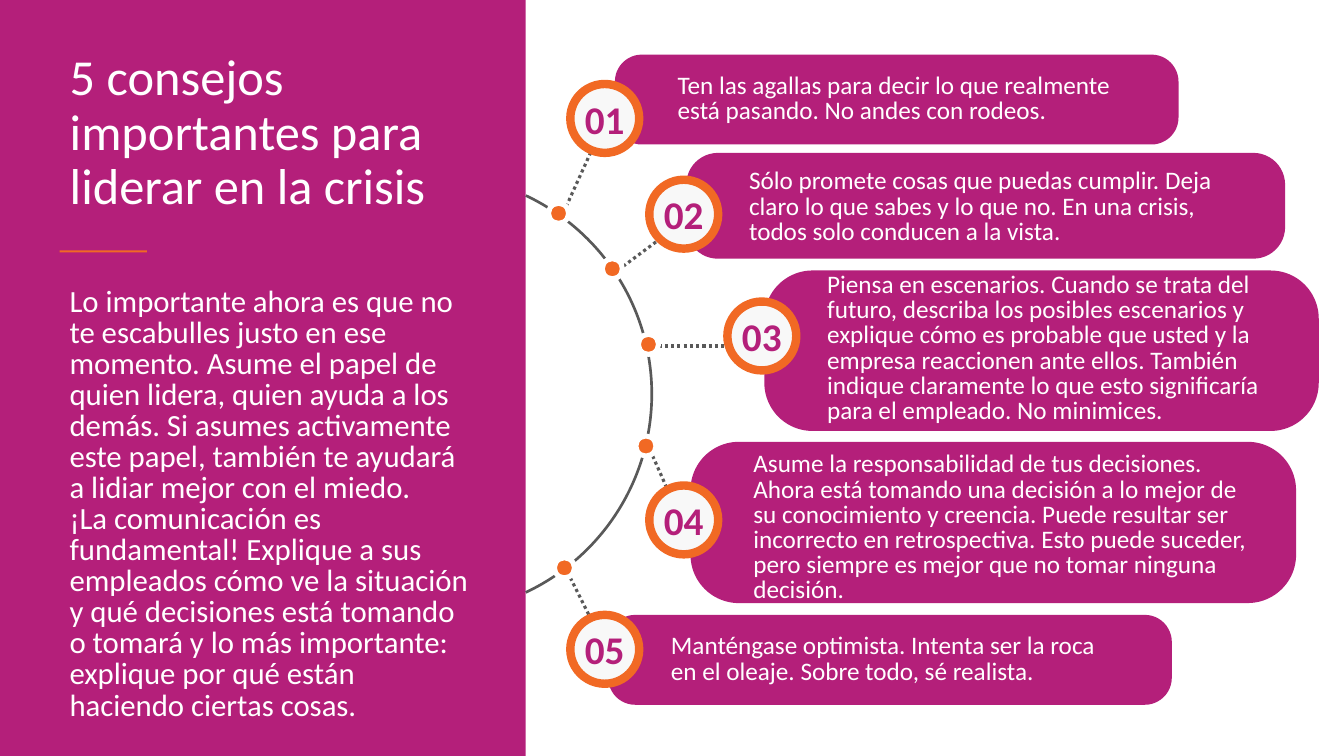
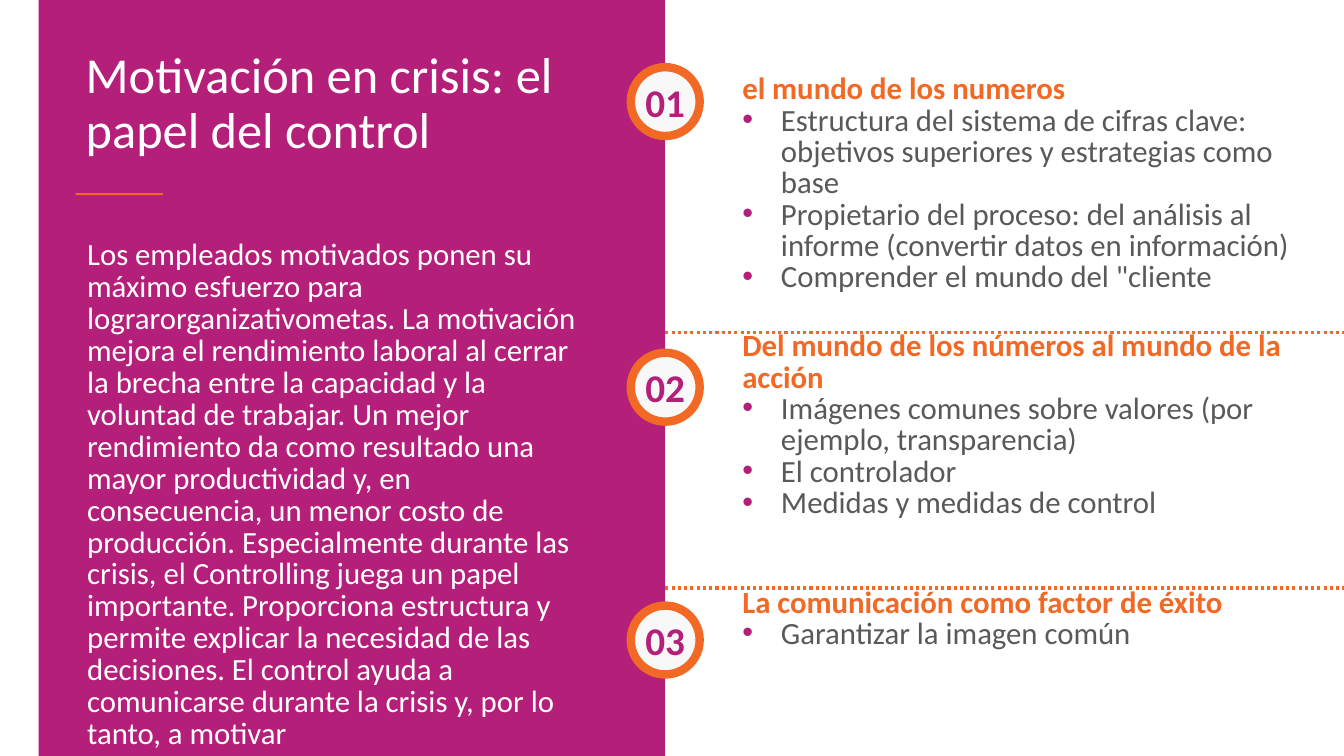
from math import acos, degrees

from lxml.etree import SubElement
from pptx import Presentation
from pptx.dml.color import RGBColor
from pptx.enum.dml import MSO_LINE
from pptx.enum.shapes import MSO_CONNECTOR, MSO_SHAPE
from pptx.enum.text import MSO_ANCHOR, MSO_AUTO_SIZE, PP_ALIGN
from pptx.oxml.ns import qn
from pptx.util import Inches, Pt

COLOURS = {
    "magenta": "B41F7A",
    "orange": "F16924",
    "grey": "595959",
    "pale": "F8F8F8",
    "white": "FFFFFF",
}
FONT = "Calibri"
COLUMNS, ROWS = 160, 90
UNIT = Inches(1) // 12
RING_SIZE, DOT_SIZE = 8.2, 2.4
CARD_INDENT = 6.3
HANGING = round(4.6 * UNIT)


def place(slide, box, kind=None, fill=None, line=None, weight=1):
    left, top, width, height = [round(value * UNIT) for value in box]
    if kind is None:
        return slide.shapes.add_textbox(left, top, width, height)
    shape = slide.shapes.add_shape(kind, left, top, width, height)
    shape.shadow.inherit = False
    if fill:
        shape.fill.solid()
        shape.fill.fore_color.rgb = RGBColor.from_string(COLOURS[fill])
    else:
        shape.fill.background()
    if line:
        shape.line.color.rgb = RGBColor.from_string(COLOURS[line])
        shape.line.width = Pt(weight)
    else:
        shape.line.fill.background()
    return shape


def write(shape, text, size=22, colour="white", bold=False, spacing=None,
          align=PP_ALIGN.LEFT, anchor=MSO_ANCHOR.TOP, bullet=False):
    frame = shape.text_frame
    frame.word_wrap = True
    frame.auto_size = MSO_AUTO_SIZE.NONE
    frame.vertical_anchor = anchor
    paragraph = frame.add_paragraph() if frame.text else frame.paragraphs[0]
    paragraph.alignment = align
    paragraph.space_before = Pt(0)
    if spacing:
        paragraph.line_spacing = spacing
    if bullet:
        properties = paragraph._p.get_or_add_pPr()
        properties.set("marL", str(HANGING))
        properties.set("indent", str(-HANGING))
        bullet_colour = SubElement(properties, qn("a:buClr"))
        SubElement(bullet_colour, qn("a:srgbClr"), val=COLOURS["magenta"])
        SubElement(properties, qn("a:buFont"), typeface="Arial")
        SubElement(properties, qn("a:buChar"), char="•")
    run = paragraph.add_run()
    run.text = text
    run.font.name = FONT
    run.font.size = Pt(size)
    run.font.bold = bold
    run.font.color.rgb = RGBColor.from_string(COLOURS[colour])


presentation = Presentation()
presentation.slide_width = COLUMNS * UNIT
presentation.slide_height = ROWS * UNIT

pages = [
    {
        "title": "5 consejos importantes para liderar en la crisis",
        "panel": (0, 0, 62.6, ROWS),
        "title_box": (7.1, 5.6, 50, 22),
        "accent_top": 29.8,
        "body_box": (7.1, 33.6, 50, 53),
        "spacing": 22.2,
        "body": [
            "Lo importante ahora es que no te escabulles justo en ese momento. "
            "Asume el papel de quien lidera, quien ayuda a los demás. Si asumes "
            "activamente este papel, también te ayudará a lidiar mejor con el miedo.",
            "¡La comunicación es fundamental! Explique a sus empleados cómo ve la "
            "situación y qué decisiones está tomando o tomará y lo más importante: "
            "explique por qué están haciendo ciertas cosas.",
        ],
    },
    {
        "title": "Motivación en crisis: el papel del control",
        "panel": (4.6, 0, 74.6, ROWS),
        "title_box": (9, 5.4, 58.4, 16),
        "accent_top": 23,
        "body_box": (9.2, 28, 62.4, 62),
        "spacing": 22.8,
        "body": [
            "Los empleados motivados ponen su máximo esfuerzo para "
            "lograrorganizativometas. La motivación mejora el rendimiento laboral "
            "al cerrar la brecha entre la capacidad y la voluntad de trabajar. Un "
            "mejor rendimiento da como resultado una mayor productividad y, en "
            "consecuencia, un menor costo de producción. Especialmente durante las "
            "crisis, el Controlling juega un papel importante. Proporciona "
            "estructura y permite explicar la necesidad de las decisiones. El "
            "control ayuda a comunicarse durante la crisis y, por lo tanto, a motivar",
        ],
    },
]

slides = []
for page in pages:
    slide = presentation.slides.add_slide(presentation.slide_layouts[5])
    slides.append(slide)
    panel = place(slide, page["panel"], MSO_SHAPE.RECTANGLE, "magenta")
    title = slide.shapes.title
    title.left, title.top, title.width, title.height = [
        round(value * UNIT) for value in page["title_box"]]
    write(title, page["title"], size=36, spacing=0.9)
    panel.element.addnext(title.element)
    accent_box = (page["title_box"][0], page["accent_top"], 10.4, 0.24)
    place(slide, accent_box, MSO_SHAPE.RECTANGLE, "orange")
    body = place(slide, page["body_box"])
    for text in page["body"]:
        write(body, text, spacing=Pt(page["spacing"]))

tips_slide, control_slide = slides

dotted_lines = [
    (tips_slide, "grey", (67.4, 24.6), (71.3, 16)),
    (tips_slide, "grey", (74.2, 31.7), (82.4, 25.6)),
    (tips_slide, "grey", (78.4, 41.2), (87.6, 41.2)),
    (tips_slide, "grey", (77.4, 53.6), (80.8, 61.3)),
    (tips_slide, "grey", (67.9, 68.8), (72, 77)),
    (control_slide, "orange", (79.2, 39.6), (COLUMNS, 39.6)),
    (control_slide, "orange", (79.2, 70), (COLUMNS, 70)),
]
for slide, colour, start, end in dotted_lines:
    connector = slide.shapes.add_connector(
        MSO_CONNECTOR.STRAIGHT, *[round(value * UNIT) for value in start + end])
    connector.line.color.rgb = RGBColor.from_string(COLOURS[colour])
    connector.line.width = Pt(2.25)
    connector.line.dash_style = MSO_LINE.ROUND_DOT
    SubElement(connector.element.spPr, qn("a:effectLst"))

arc_x, arc_y, radius = 51.5, 46.9, 26.1
arc_box = (arc_x - radius, arc_y - radius, 2 * radius, 2 * radius)
arc = place(tips_slide, arc_box, MSO_SHAPE.ARC, line="grey", weight=1.9)
half_angle = degrees(acos((pages[0]["panel"][2] - arc_x) / radius))
arc.adjustments[0] = (360 - half_angle) * 0.6
arc.adjustments[1] = half_angle * 0.6

for x, y in [(66.5, 25.4), (72.9, 32), (77.2, 41), (76.9, 53.1), (67.2, 67.6)]:
    dot_box = (x - DOT_SIZE / 2, y - DOT_SIZE / 2, DOT_SIZE, DOT_SIZE)
    place(tips_slide, dot_box, MSO_SHAPE.OVAL, "orange", "white", 3.6)

tips = [
    ((73.2, 6.5, 67.1, 10.7), 54.7, 0,
     "Ten las agallas para decir lo que realmente está pasando. No andes con rodeos."),
    ((81.7, 18.2, 71.3, 12.6), 62.9, 0.2,
     "Sólo promete cosas que puedas cumplir. Deja claro lo que sabes y lo que no. "
     "En una crisis, todos solo conducen a la vista."),
    ((91, 32.2, 66, 19.1), 59.8, -0.2,
     "Piensa en escenarios. Cuando se trata del futuro, describa los posibles "
     "escenarios y explique cómo es probable que usted y la empresa reaccionen "
     "ante ellos. También indique claramente lo que esto significaría para el "
     "empleado. No minimices."),
    ((82.2, 52.6, 72.1, 19.2), 63, 0.7,
     "Asume la responsabilidad de tus decisiones. Ahora está tomando una decisión "
     "a lo mejor de su conocimiento y creencia. Puede resultar ser incorrecto en "
     "retrospectiva. Esto puede suceder, pero siempre es mejor que no tomar "
     "ninguna decisión."),
    ((72.4, 73.2, 67.1, 10.7), 54.7, 0,
     "Manténgase optimista. Intenta ser la roca en el oleaje. Sobre todo, sé realista."),
]
for card_box, text_width, shift, text in tips:
    card = place(tips_slide, card_box, MSO_SHAPE.ROUNDED_RECTANGLE, "magenta")
    card.adjustments[0] = 0.3
    left, top, width, height = card_box
    caption = place(tips_slide, (left + CARD_INDENT, top + shift, text_width, height))
    caption.text_frame.margin_top = caption.text_frame.margin_bottom = 0
    write(caption, text, size=18, spacing=Pt(18), anchor=MSO_ANCHOR.MIDDLE)

topics = [
    (8.3, "el mundo de los numeros", [
        "Estructura del sistema de cifras clave: objetivos superiores y "
        "estrategias como base",
        "Propietario del proceso: del análisis al informe (convertir datos en "
        "información)",
        'Comprender el mundo del "cliente',
    ]),
    (38.9, "Del mundo de los números al mundo de la acción", [
        "Imágenes comunes sobre valores (por ejemplo, transparencia)",
        "El controlador",
        "Medidas y medidas de control",
    ]),
    (69.4, "La comunicación como factor de éxito", ["Garantizar la imagen común"]),
]
for top, heading, points in topics:
    topic = place(control_slide, (87.2, top, 68.2, 5 + 7 * len(points)))
    write(topic, heading, colour="orange", bold=True, spacing=Pt(22.4))
    for point in points:
        write(topic, point, colour="grey", spacing=Pt(22.4), bullet=True)

ring_centres = [
    (tips_slide, [(72, 14.1), (81.4, 25.5), (90.7, 40), (81.4, 61.9), (72, 77.3)]),
    (control_slide, [(79.2, 12.1), (79.2, 46.1), (79.2, 76.2)]),
]
for slide, centres in ring_centres:
    for number, (x, y) in enumerate(centres, 1):
        ring_box = (x - RING_SIZE / 2, y - RING_SIZE / 2, RING_SIZE, RING_SIZE)
        ring = place(slide, ring_box, MSO_SHAPE.OVAL, "pale", "orange", 6)
        frame = ring.text_frame
        frame.margin_left = frame.margin_right = 0
        frame.margin_top = frame.margin_bottom = 0
        write(ring, f"{number:02}", size=28, colour="magenta", bold=True,
              align=PP_ALIGN.CENTER, anchor=MSO_ANCHOR.MIDDLE)

presentation.save("out.pptx")
